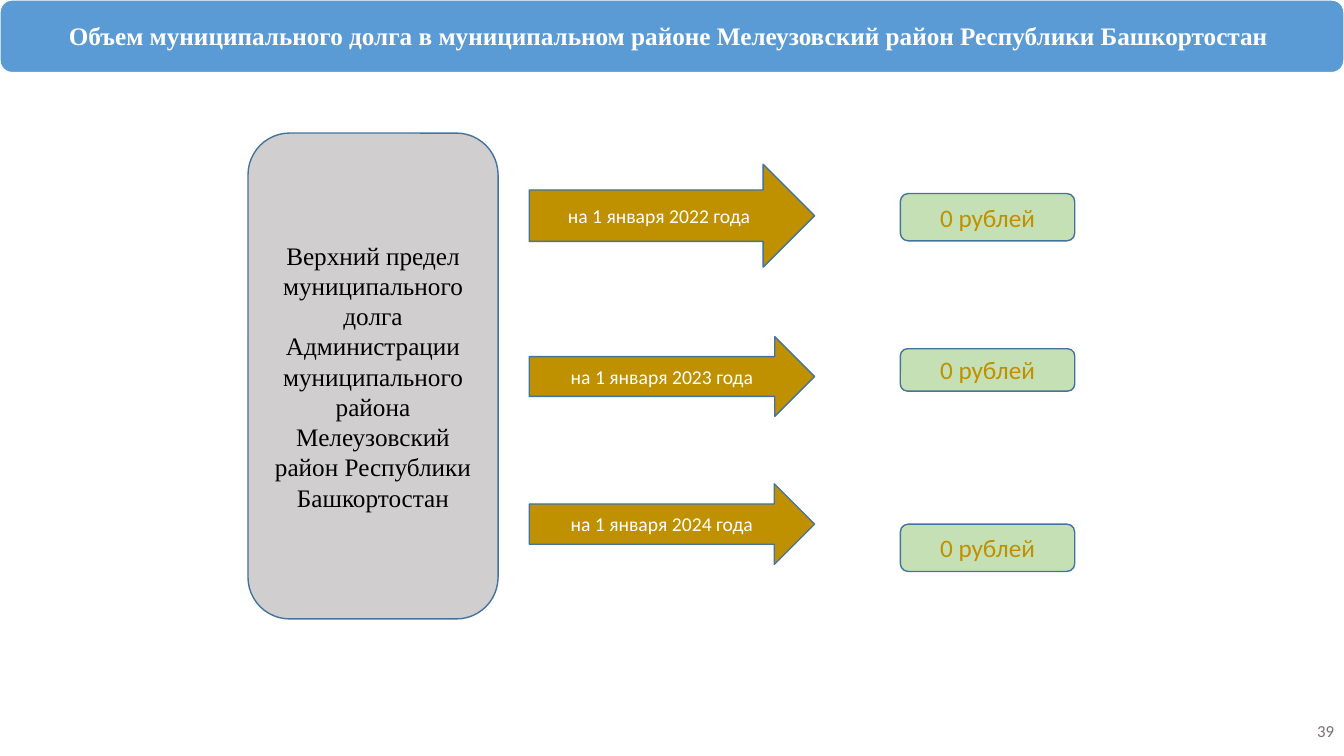
from pptx import Presentation
from pptx.dml.color import RGBColor
from pptx.enum.shapes import MSO_SHAPE
from pptx.enum.text import MSO_ANCHOR, PP_ALIGN
from pptx.util import Inches, Pt

OUTLINE = "43739E"
GOLD = "BF9000"
LIMITS = [
    ("на 1 января 2022 года", 1.63, 1.02, "0 рублей", 1.92, 0.47),
    ("на 1 января 2023 года", 3.34, 0.79, "0 рублей", 3.46, 0.42),
    ("на 1 января 2024 года", 4.8, 0.8, "0 рублей", 5.2, 0.47),
]


def color(value):
    return RGBColor.from_string(value)


def write(box, text, size=18, font="Calibri", ink="FFFFFF", bold=False,
          align=PP_ALIGN.CENTER, anchor=MSO_ANCHOR.MIDDLE, spacing=1.0):
    frame = box.text_frame
    frame.word_wrap = True
    frame.vertical_anchor = anchor
    para = frame.paragraphs[0]
    para.alignment = align
    para.line_spacing = spacing
    span = para.add_run()
    span.text = text
    span.font.size = Pt(size)
    span.font.name = font
    span.font.bold = bold
    span.font.color.rgb = color(ink)


def add_block(page, kind, left, top, width, height, fill, line=OUTLINE):
    box = page.shapes.add_shape(
        kind, Inches(left), Inches(top), Inches(width), Inches(height))
    box.shadow.inherit = False
    box.fill.solid()
    box.fill.fore_color.rgb = color(fill)
    box.line.color.rgb = color(line)
    box.line.width = Pt(1)
    return box


def add_text(page, left, top, width, height, text, **style):
    box = page.shapes.add_textbox(
        Inches(left), Inches(top), Inches(width), Inches(height))
    write(box, text, **style)


def add_limit(page, date, arrow_top, arrow_height, amount, amount_top, amount_height):
    arrow = add_block(page, MSO_SHAPE.RIGHT_ARROW,
                      5.25, arrow_top, 2.83, arrow_height, GOLD)
    write(arrow, date, size=14)
    badge = add_block(page, MSO_SHAPE.ROUNDED_RECTANGLE,
                      8.93, amount_top, 1.73, amount_height, "C5E0B4")
    write(badge, amount, ink=GOLD)


def main():
    deck = Presentation()
    deck.slide_width = Inches(13.33)
    deck.slide_height = Inches(7.5)
    page = deck.slides.add_slide(deck.slide_layouts[6])

    add_text(page, 10.33, 7.1, 3, 0.4, "39", size=12, ink="767171",
             align=PP_ALIGN.RIGHT, anchor=MSO_ANCHOR.TOP)

    subject = add_block(page, MSO_SHAPE.ROUNDED_RECTANGLE,
                        2.46, 1.32, 2.48, 4.82, "D0CECE")
    write(subject, "Верхний предел муниципального долга Администрации "
          "муниципального района Мелеузовский район Республики Башкортостан",
          font="Times New Roman", ink="000000")

    for limit in LIMITS:
        add_limit(page, *limit)

    add_block(page, MSO_SHAPE.ROUNDED_RECTANGLE,
              0, 0, 13.33, 0.72, "5B9BD5", line="FFFFFF")
    add_text(page, 0, 0.04, 13.26, 0.65,
             "Объем муниципального долга в муниципальном районе "
             "Мелеузовский район Республики Башкортостан",
             font="Times New Roman", bold=True, spacing=0.9)

    deck.save("out.pptx")


if __name__ == "__main__":
    main()
